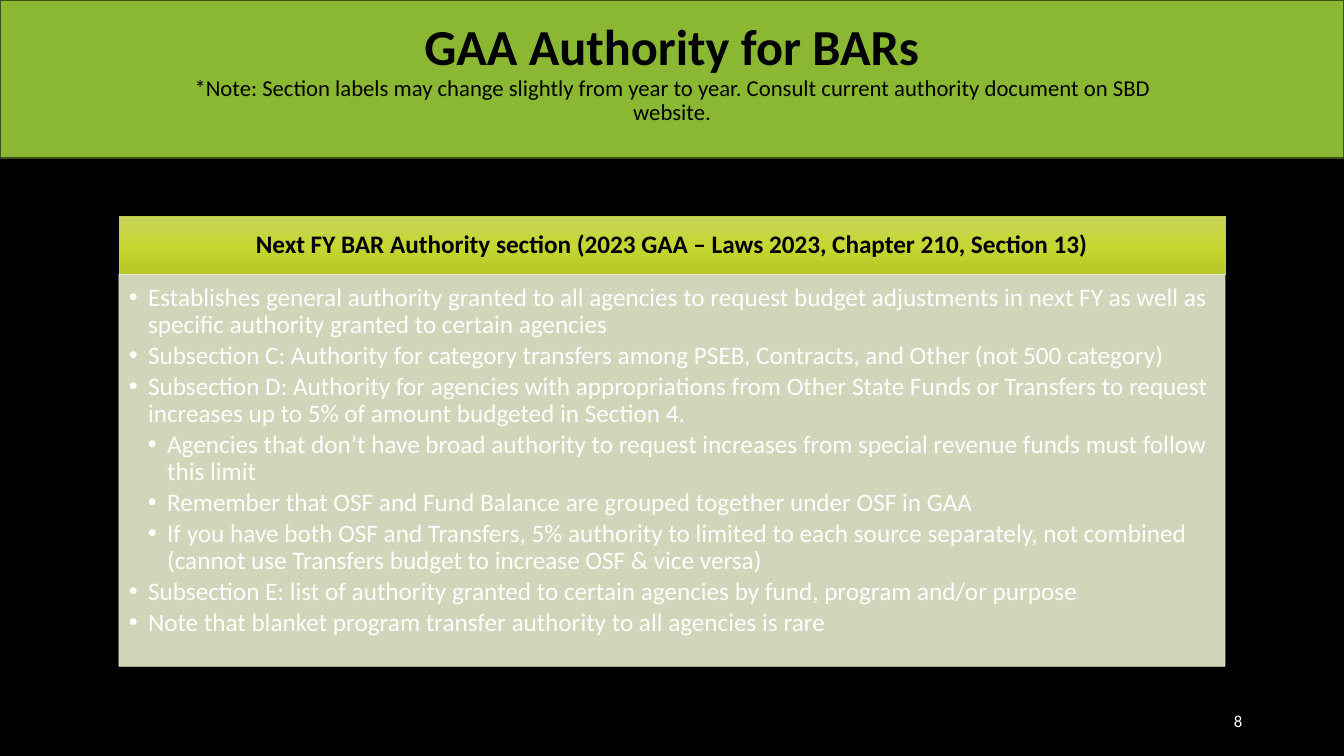
"""Build the slide on budget authority for BARs."""
import pptx
import pptx.dml.color
import pptx.enum.shapes
import pptx.enum.text
import pptx.oxml.ns
import pptx.util
from lxml import etree

TITLE = "GAA Authority for BARs"
NOTE = ("*Note: Section labels may change slightly from year to year. "
        "Consult current authority document on SBD website.")
HEADING = "Next FY BAR Authority section (2023 GAA – Laws 2023, Chapter 210, Section 13)"
POINTS = [
    (1, "Establishes general authority granted to all agencies to request budget adjustments "
        "in next FY as well as specific authority granted to certain agencies"),
    (1, "Subsection C: Authority for category transfers among PSEB, Contracts, and Other "
        "(not 500 category)"),
    (1, "Subsection D: Authority for agencies with appropriations from Other State Funds or "
        "Transfers to request increases up to 5% of amount budgeted in Section 4."),
    (2, "Agencies that don’t have broad authority to request increases from special revenue "
        "funds must follow this limit"),
    (2, "Remember that OSF and Fund Balance are grouped together under OSF in GAA"),
    (2, "If you have both OSF and Transfers, 5% authority to limited to each source separately, "
        "not combined (cannot use Transfers budget to increase OSF & vice versa)"),
    (1, "Subsection E: list of authority granted to certain agencies by fund, program and/or purpose"),
    (1, "Note that blanket program transfer authority to all agencies is rare"),
]
PAGE_NUMBER = "8"

COLORS = {
    "black": "000000", "white": "FFFFFF", "band": "8AB833", "band line": "3C5116",
    "heading line": "C0CF3A", "panel": "E8EDCE",
}
HEADING_STOPS = [(0, "C7D55B"), (50, "C6D633"), (100, "B7C725")]
FONT = "Calibri"
WIDTH, HEIGHT = 13.33, 7.5
PANEL_WIDTH = 10.97
PANEL_LEFT = (WIDTH - PANEL_WIDTH) / 2
HEADING_TOP, HEADING_HEIGHT, PANEL_HEIGHT = 2.15, 0.57, 3.89
INDENT = 0.19
PANEL_OPACITY = 90

inches = pptx.util.Inches
points = pptx.util.Pt
align = pptx.enum.text.PP_ALIGN
anchor = pptx.enum.text.MSO_ANCHOR
qualified = pptx.oxml.ns.qn


def color(name):
    return pptx.dml.color.RGBColor.from_string(COLORS[name])


def add_box(page, area, fill, line, line_width):
    box = page.shapes.add_shape(pptx.enum.shapes.MSO_SHAPE.RECTANGLE, *map(inches, area))
    box.shadow.inherit = False
    box.fill.solid()
    box.fill.fore_color.rgb = color(fill)
    box.line.color.rgb = color(line)
    box.line.width = points(line_width)
    return box


def set_frame(frame, vertical, insets=(0.1, 0.05, 0.1, 0.05)):
    frame.word_wrap = True
    frame.auto_size = pptx.enum.text.MSO_AUTO_SIZE.NONE
    frame.vertical_anchor = vertical
    (frame.margin_left, frame.margin_top,
     frame.margin_right, frame.margin_bottom) = map(inches, insets)


def add_span(para, text, size, name, bold=False):
    span = para.add_run()
    span.text = text
    span.font.name = FONT
    span.font.size = points(size)
    span.font.bold = bold
    span.font.color.rgb = color(name)


def set_gradient(box, stops):
    box.fill.gradient()
    box.fill.gradient_angle = 270
    stop_list = box.element.spPr.find(qualified("a:gradFill")).find(qualified("a:gsLst"))
    for stop in list(stop_list):
        stop_list.remove(stop)
    for share, value in stops:
        stop = etree.SubElement(stop_list, qualified("a:gs"), pos=str(share * 1000))
        etree.SubElement(stop, qualified("a:srgbClr"), val=value)


def set_opacity(box, percent):
    for tint in box.element.spPr.iter(qualified("a:srgbClr")):
        etree.SubElement(tint, qualified("a:alpha"), val=str(percent * 1000))


def set_bullet(para, level):
    para.level = level - 1
    settings = para._p.get_or_add_pPr()
    settings.set("marL", str(inches(INDENT * level)))
    settings.set("indent", str(-inches(INDENT)))
    etree.SubElement(settings, qualified("a:buFont"), typeface="Arial")
    etree.SubElement(settings, qualified("a:buChar"), char="•")


def add_title(page):
    band = add_box(page, (0, 0, WIDTH, 1.57), "band", "band line", 1)
    title = page.shapes.title
    title.element.addprevious(band.element)
    title.left, title.top, title.width, title.height = map(inches, (1.75, 0.17, 9.83, 1.22))
    set_frame(title.text_frame, anchor.TOP)
    para = title.text_frame.paragraphs[0]
    para.alignment = align.CENTER
    para.line_spacing = 0.9
    add_span(para, TITLE, 36, "black", True)
    para.add_line_break()
    add_span(para, NOTE, 16.2, "black")


def add_panel(page):
    heading = add_box(page, (PANEL_LEFT, HEADING_TOP, PANEL_WIDTH, HEADING_HEIGHT),
                      "heading line", "heading line", 0.5)
    set_gradient(heading, HEADING_STOPS)
    set_frame(heading.text_frame, anchor.MIDDLE, (0.14, 0.08, 0.14, 0.08))
    para = heading.text_frame.paragraphs[0]
    para.alignment = align.CENTER
    para.line_spacing = 0.9
    add_span(para, HEADING, 18, "black", True)

    panel = add_box(page, (PANEL_LEFT, HEADING_TOP + HEADING_HEIGHT, PANEL_WIDTH, PANEL_HEIGHT),
                    "panel", "panel", 0.5)
    set_opacity(panel, PANEL_OPACITY)
    frame = panel.text_frame
    set_frame(frame, anchor.TOP, (0.1, 0.1, 0.14, 0.16))
    for index, (level, text) in enumerate(POINTS):
        para = frame.add_paragraph() if index else frame.paragraphs[0]
        para.alignment = align.LEFT
        para.line_spacing = 0.9
        para.space_after = points(2.7)
        set_bullet(para, level)
        add_span(para, text, 18, "white")


def add_page_number(page):
    box = page.shapes.add_textbox(*map(inches, (9.42, 6.95, 3, 0.4)))
    set_frame(box.text_frame, anchor.MIDDLE)
    para = box.text_frame.paragraphs[0]
    para.alignment = align.RIGHT
    add_span(para, PAGE_NUMBER, 12, "white")


def main():
    deck = pptx.Presentation()
    deck.slide_width, deck.slide_height = inches(WIDTH), inches(HEIGHT)
    page = deck.slides.add_slide(deck.slide_layouts.get_by_name("Title Only"))
    page.background.fill.solid()
    page.background.fill.fore_color.rgb = color("black")
    add_title(page)
    add_panel(page)
    add_page_number(page)
    deck.save("out.pptx")


if __name__ == "__main__":
    main()
